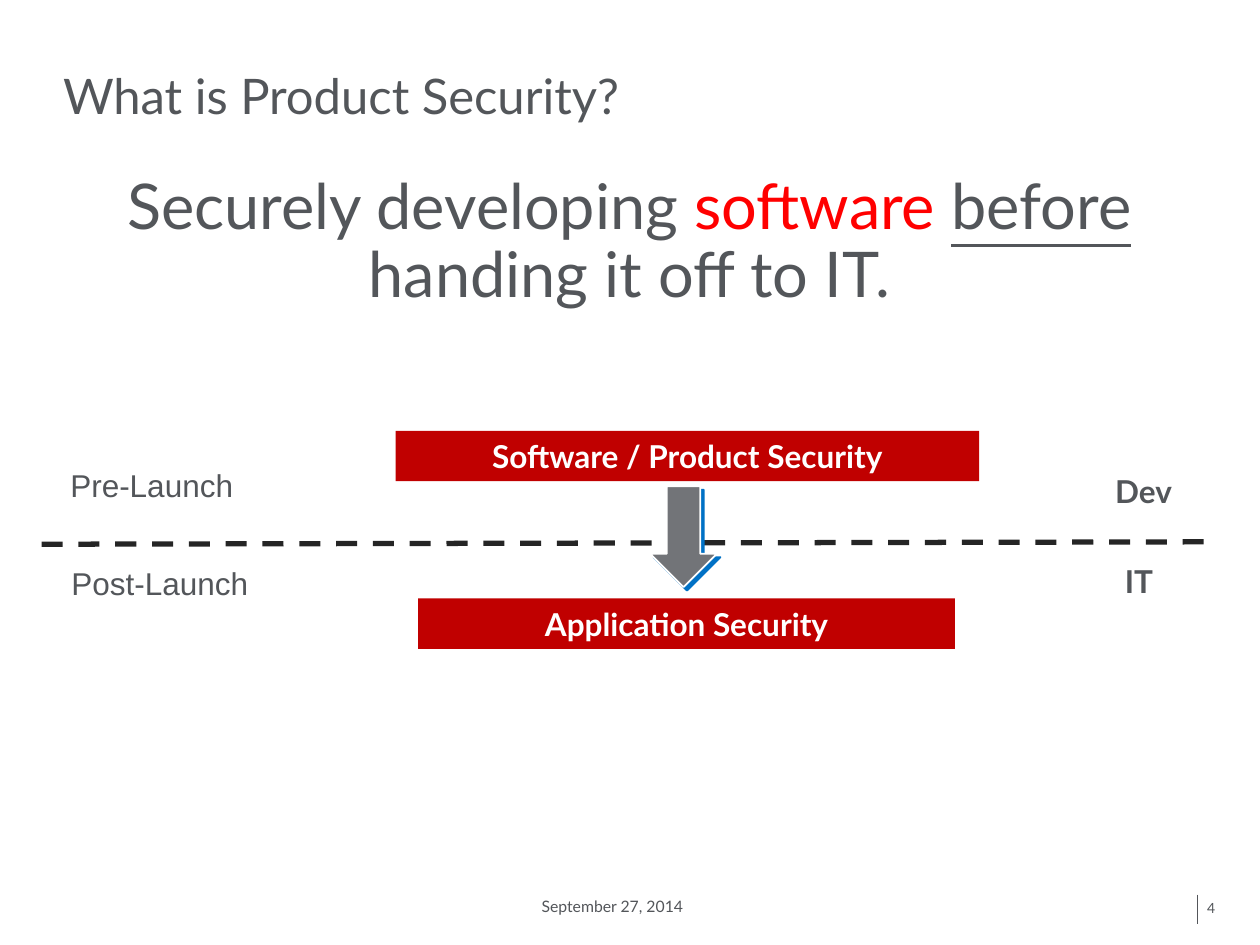
from lxml import etree
from pptx import Presentation
from pptx import util as u
from pptx.dml.color import RGBColor
from pptx.enum import dml, shapes, text
from pptx.oxml import parse_xml
from pptx.oxml.ns import nsdecls, qn

Pt = u.Pt
GREY, RED, WHITE = "53565A", "C00000", "FFFFFF"
LEFT, CENTER, RIGHT = (text.PP_ALIGN.LEFT, text.PP_ALIGN.CENTER,
                       text.PP_ALIGN.RIGHT)


def colour(value):
    return RGBColor.from_string(value)


def place(box, left, top, width, height):
    """Lengths of a part whose left and top are measured from the box."""
    return [Pt(n) for n in (box[0] + left, box[1] + top, width, height)]


def set_frame(frame, insets=None, anchor=text.MSO_ANCHOR.TOP):
    formats = {"word_wrap": True, "auto_size": text.MSO_AUTO_SIZE.NONE,
               "vertical_anchor": anchor}
    if insets:
        sides = ("left", "top", "right", "bottom")
        formats.update({f"margin_{side}": Pt(inset)
                        for side, inset in zip(sides, insets)})
    for name, value in formats.items():
        setattr(frame, name, value)


def write(para, spans, size, align=LEFT, font="Lato", spacing=None):
    """Fill a paragraph with spans of (words, colour, font formats)."""
    para.alignment = align
    para.line_spacing = spacing
    for words, shade, extra in spans:
        span = para.add_run()
        span.text = words
        formats = {"name": font, "size": Pt(size), "bold": False, **extra}
        for name, value in formats.items():
            setattr(span.font, name, value)
        span.font.color.rgb = colour(shade)


def add_label(page, area, words, size=18, align=LEFT, font="Lato",
              bold=False, spacing=None, **frame_formats):
    label = page.shapes.add_textbox(*area)
    set_frame(label.text_frame, **frame_formats)
    write(label.text_frame.paragraphs[0], [(words, GREY, {"bold": bold})],
          size, align, font, spacing)


def add_line(page, start, end, shade, width, dash=None):
    line = page.shapes.add_connector(
        shapes.MSO_CONNECTOR.STRAIGHT, *[Pt(n) for n in (*start, *end)])
    line.line.color.rgb = colour(shade)
    line.line.width = Pt(width)
    if dash:
        line.line.dash_style = dash
    etree.SubElement(line._element.spPr, qn("a:effectLst"))


def fill_placeholder(holder, area, insets, anchor, spans, size, align=LEFT):
    holder.left, holder.top, holder.width, holder.height = area
    set_frame(holder.text_frame, insets, anchor)
    para = holder.text_frame.paragraphs[0]
    properties = para._p.get_or_add_pPr()
    properties.set("marL", "0")
    properties.set("indent", "0")
    para.space_before = Pt(0)
    para.space_after = Pt(0)
    write(para, spans, size, align, spacing=0.9)
    # The bullet element follows the spacing elements
    etree.SubElement(properties, qn("a:buNone"))


def add_heading(page, box):
    # Title
    fill_placeholder(page.shapes.title, place(box, 0, 0, 648, 57),
                     (0, 0, 0, 0), text.MSO_ANCHOR.BOTTOM,
                     [("What is Product Security?", GREY, {})], 28)
    # Definition
    spans = [("Securely developing ", GREY, {}),
             ("software ", "FF0000", {}),
             ("before", GREY, {"underline": True}),
             (" handing it off to IT.", GREY, {})]
    fill_placeholder(page.placeholders[1], place(box, 0, 85.7, 647.3, 86.4),
                     (0, 0, 0, 3.6), text.MSO_ANCHOR.TOP, spans, 36, CENTER)


def add_phase(page, box, phase, bar, team):
    """One side of the launch line: phase name, red bar and owning team."""
    name, name_top = phase
    add_label(page, place(box, 0, name_top, 189.4, 36), name, font="Arial")

    words, *bar_area = bar
    block = page.shapes.add_shape(shapes.MSO_SHAPE.RECTANGLE,
                                  *place(box, *bar_area))
    block.shadow.inherit = False
    block.fill.solid()
    block.fill.fore_color.rgb = colour(RED)
    block.line.fill.background()
    set_frame(block.text_frame, anchor=text.MSO_ANCHOR.MIDDLE)
    write(block.text_frame.paragraphs[0], [(words, WHITE, {"bold": True})],
          18, CENTER)

    owner, *owner_area = team
    add_label(page, place(box, *owner_area), owner, align=RIGHT, bold=True)


def add_handover(page, box):
    """Grey arrow with a hard blue shadow."""
    arrow = page.shapes.add_shape(shapes.MSO_SHAPE.DOWN_ARROW,
                                  *place(box, 0, 0, 38.2, 57.6))
    arrow.fill.solid()
    arrow.fill.fore_color.rgb = colour("727478")
    arrow.line.color.rgb = colour(WHITE)
    arrow.line.width = Pt(1)
    arrow._element.spPr.append(parse_xml(
        f'<a:effectLst {nsdecls("a")}>'
        f'<a:outerShdw dist="{Pt(2.8)}" dir="2700000" algn="ctr"'
        ' rotWithShape="0"><a:srgbClr val="0071C5"/></a:outerShdw>'
        '</a:effectLst>'))


def add_footer(page, box):
    left, top = box
    add_line(page, (left + 381.6, top + 2.2), (left + 381.6, top + 18.8),
             GREY, 0.5)
    add_label(page, place(box, 387.4, 2.2, 18, 16.6), "4", 8, spacing=0.9,
              insets=(0, 0, 0, 0), anchor=text.MSO_ANCHOR.MIDDLE)
    add_label(page, place(box, 0, 0, 127.4, 17.3), "September 27, 2014", 9)


def main():
    deck = Presentation()
    deck.slide_width, deck.slide_height = Pt(720), Pt(540)
    page = deck.slides.add_slide(deck.slide_layouts[1])
    page.background.fill.solid()
    page.background.fill.fore_color.rgb = colour(WHITE)

    add_heading(page, (36, 14.4))
    add_phase(page, (33.1, 246.2), ("Pre-Launch", 16.6),
              ("Software / Product Security", 193, 0, 333.4, 28.8),
              ("Dev", 575.3, 20.2, 68.4, 36))
    add_line(page, (23.8, 311), (696.2, 309.6), "252525", 3,
             dml.MSO_LINE.DASH)
    add_phase(page, (33.8, 317.5), ("Post-Launch", 1.5),
              ("Application Security", 205.2, 24.5, 306.7, 28.8),
              ("IT", 576, 0, 56.2, 36))
    add_handover(page, (371.5, 277.9))
    add_footer(page, (302.4, 509))
    deck.save("out.pptx")


if __name__ == "__main__":
    main()
